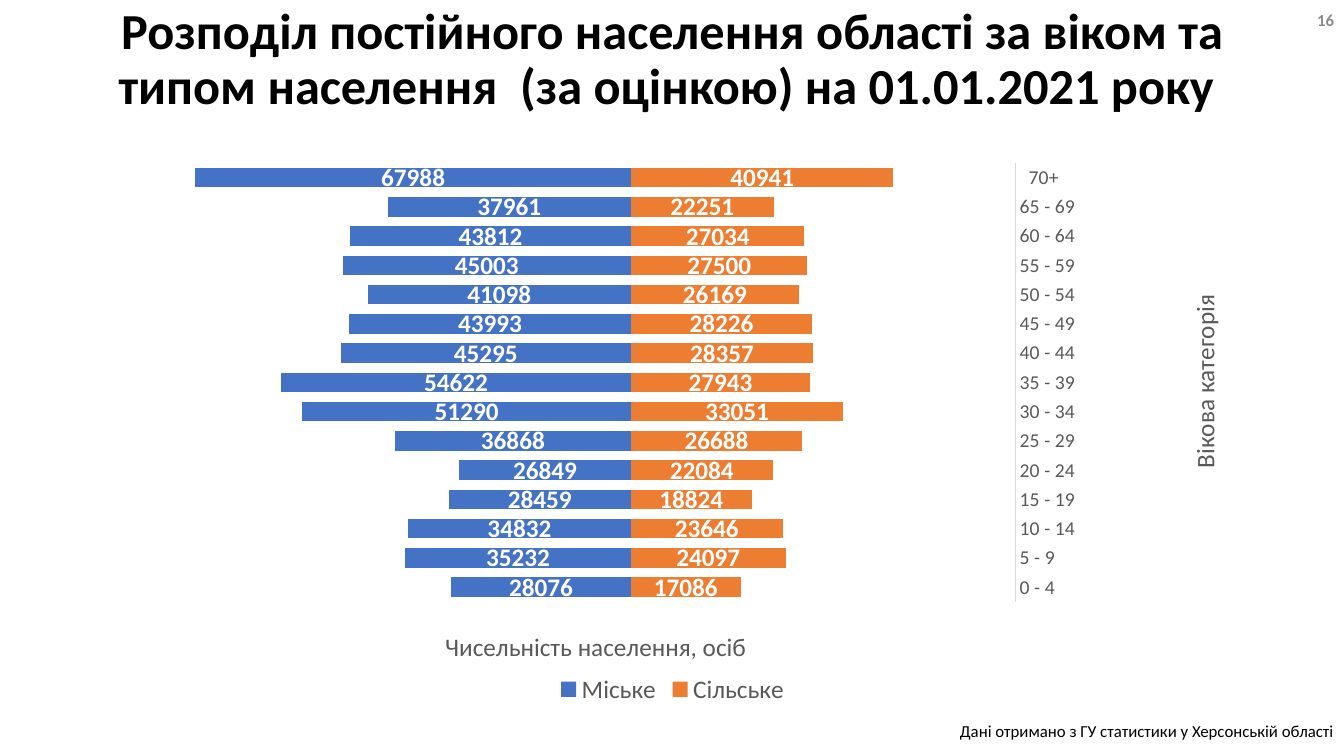
from lxml import etree
from pptx import Presentation
from pptx.chart.data import CategoryChartData
from pptx.dml.color import RGBColor
from pptx.enum.chart import (XL_AXIS_CROSSES, XL_CHART_TYPE, XL_LABEL_POSITION,
                             XL_LEGEND_POSITION, XL_TICK_MARK)
from pptx.enum.text import MSO_ANCHOR, PP_ALIGN
from pptx.oxml.ns import qn
from pptx.util import Inches, Pt

FONT = "Calibri"
GREY = "595959"
CENTER, RIGHT = PP_ALIGN.CENTER, PP_ALIGN.RIGHT
MIDDLE, TOP = MSO_ANCHOR.MIDDLE, MSO_ANCHOR.TOP
TITLE_LAYOUT = 5

AGES = [f"{start} - {start + 4}" for start in range(0, 70, 5)] + ["  70+"]
URBAN = [28076, 35232, 34832, 28459, 26849, 36868, 51290, 54622,
         45295, 43993, 41098, 45003, 43812, 37961, 67988]
RURAL = [17086, 24097, 23646, 18824, 22084, 26688, 33051, 27943,
         28357, 28226, 26169, 27500, 27034, 22251, 40941]


def color(value):
    return RGBColor.from_string(value)


def style_font(font, size, value, bold=False):
    font.name = FONT
    font.size = Pt(size)
    font.bold = bold
    font.color.rgb = color(value)


def write_text(box, text, size, value, align, anchor, bold=False):
    frame = box.text_frame
    frame.word_wrap = True
    frame.vertical_anchor = anchor
    para = frame.paragraphs[0]
    para.alignment = align
    span = para.add_run()
    span.text = text
    style_font(span.font, size, value, bold)
    return para


def add_text(page, place, *text_style):
    box = page.shapes.add_textbox(*map(Inches, place))
    write_text(box, *text_style)


def set_layout(element, index, **values):
    """Give a chart part a manual layout, in fractions of the chart."""
    for old in element.findall(qn("c:layout")):
        element.remove(old)
    layout = etree.Element(qn("c:layout"))
    manual = etree.SubElement(layout, qn("c:manualLayout"))
    for name, value in values.items():
        etree.SubElement(manual, qn(f"c:{name}")).set("val", str(value))
    element.insert(index, layout)


def add_axis_title(axis, text, x, y, rotation):
    title = axis.axis_title
    frame = title.text_frame
    span = frame.paragraphs[0].add_run()
    span.text = text
    style_font(span.font, 18, GREY)
    body = frame._txBody.find(qn("a:bodyPr"))
    body.set("rot", str(rotation * 60000))
    body.set("vert", "horz")
    set_layout(title._element, 1, xMode="edge", yMode="edge", x=x, y=y)


def style_series(series, fill, number_format):
    series.format.fill.solid()
    series.format.fill.fore_color.rgb = color(fill)
    series.invert_if_negative = False
    labels = series.data_labels
    labels.show_value = True
    labels.position = XL_LABEL_POSITION.CENTER
    labels.number_format = number_format
    labels.number_format_is_linked = False
    style_font(labels.font, 18, "FFFFFF", True)


def add_pyramid(page):
    data = CategoryChartData()
    data.categories = AGES
    data.add_series("Міське", [-count for count in URBAN])
    data.add_series("Сільське", RURAL)
    place = map(Inches, (0.92, 1.42, 11.5, 5.62))
    chart = page.shapes.add_chart(XL_CHART_TYPE.BAR_STACKED, *place, data).chart
    chart.has_title = False
    style_font(chart.font, 18, "000000")

    # Bars and their labels
    plot = chart.plots[0]
    plot.gap_width = 50
    plot.overlap = 100
    plot.vary_by_categories = False
    style_series(plot.series[0], "4472C4", "#;#;#")
    style_series(plot.series[1], "ED7D31", "0")

    # Age axis stands at the right end of the hidden value axis
    ages, counts = chart.category_axis, chart.value_axis
    ages.major_tick_mark = ages.minor_tick_mark = XL_TICK_MARK.NONE
    ages.format.line.color.rgb = color("D9D9D9")
    ages.format.line.width = Pt(0.75)
    style_font(ages.tick_labels.font, 14, GREY)
    add_axis_title(ages, "Вікова категорія", 0.94, 0.26, -90)
    counts.minimum_scale = -80000
    counts.maximum_scale = 60000
    counts.crosses = XL_AXIS_CROSSES.MAXIMUM
    counts.has_major_gridlines = False
    counts.tick_labels.number_format = "#;#;#"
    counts.tick_labels.number_format_is_linked = False
    counts.visible = False
    add_axis_title(counts, "Чисельність населення, осіб", 0.3, 0.85, 0)

    # Legend and plot area
    chart.has_legend = True
    chart.legend.position = XL_LEGEND_POSITION.BOTTOM
    chart.legend.include_in_layout = False
    style_font(chart.legend.font, 18, GREY)
    area = chart._chartSpace.find(f".//{qn('c:plotArea')}")
    set_layout(area, 0, layoutTarget="inner", xMode="edge", yMode="edge",
               x=0.022, y=0.035, w=0.774, h=0.775)


def add_title(page, text):
    title = page.shapes.title
    title.left, title.top, title.width, title.height = map(
        Inches, (0.92, 0.2, 11.5, 0.8))
    para = write_text(title, text, 36, "000000", CENTER, MIDDLE, True)
    para.line_spacing = 0.9


def main():
    deck = Presentation()
    deck.slide_width = Inches(13.33)
    deck.slide_height = Inches(7.5)
    page = deck.slides.add_slide(deck.slide_layouts[TITLE_LAYOUT])

    add_title(page, "Розподіл постійного населення області за віком та типом "
                    "населення  (за оцінкою) на 01.01.2021 року ")
    # Source note, chart and page number
    add_text(page, (0, 7.1, 13.33, 0.3),
             "Дані отримано з ГУ статистики у Херсонській області",
             12, "000000", RIGHT, TOP)
    add_pyramid(page)
    add_text(page, (10.33, 0, 3, 0.4), "16", 12, "8C8C8C", RIGHT, MIDDLE, True)

    deck.save("out.pptx")


if __name__ == "__main__":
    main()
